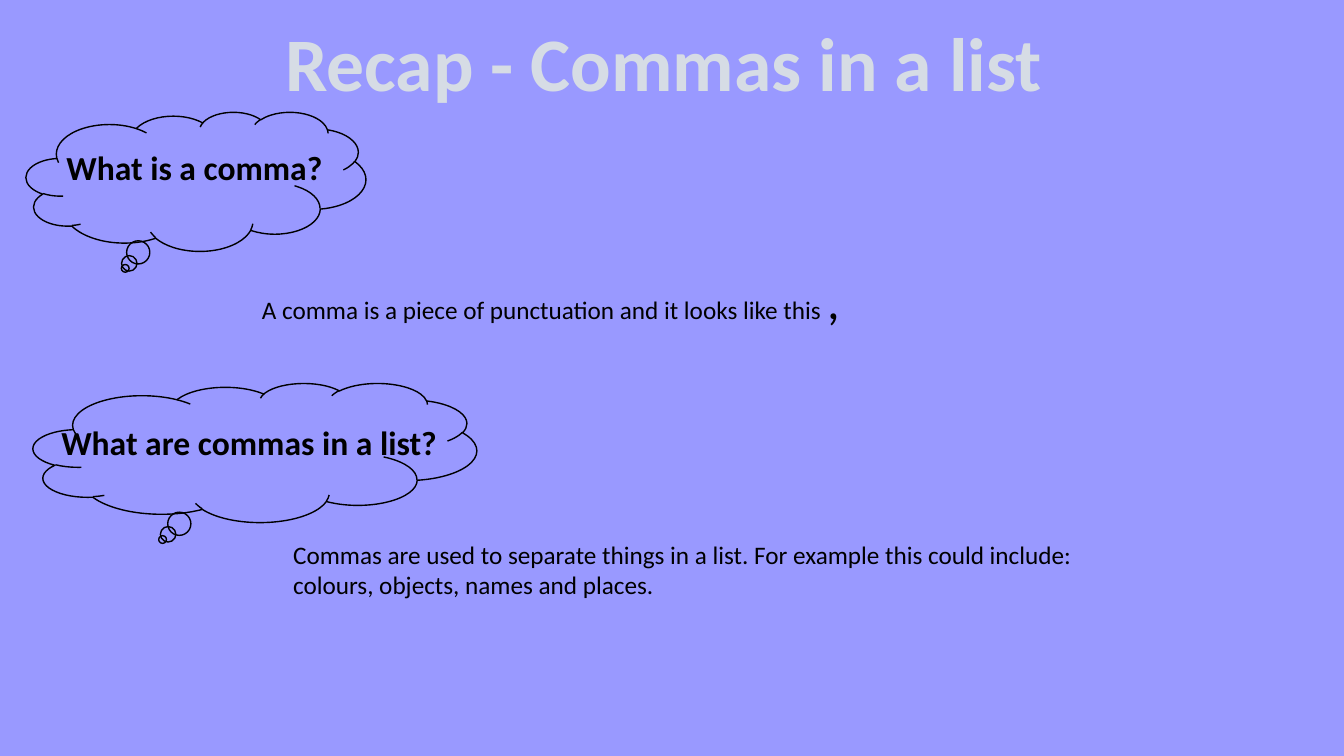
from dataclasses import dataclass

from lxml.etree import SubElement
from pptx import Presentation
from pptx.dml.color import RGBColor
from pptx.enum.dml import MSO_PATTERN as Pattern
from pptx.enum.shapes import MSO_SHAPE as Shape
from pptx.enum.text import MSO_AUTO_SIZE as AutoSize, PP_ALIGN as Align
from pptx.oxml.ns import qn
from pptx.slide import Slide
from pptx.text.text import Font
from pptx.util import Pt


@dataclass(frozen=True)
class Theme:
    font: str = "Calibri"
    background: RGBColor = RGBColor(0x99, 0x99, 0xFF)
    ink: RGBColor = RGBColor(0, 0, 0)
    title_stripe: RGBColor = RGBColor(0x44, 0x54, 0x6A)
    title_ground: RGBColor = RGBColor(0xD6, 0xDC, 0xE5)
    title_outline: str = "333F50"
    title_size: int = 54
    question_size: int = 24
    answer_size: int = 18
    comma_size: int = 36
    line_width: int = 1


THEME = Theme()


@dataclass(frozen=True)
class Box:
    left: float
    top: float
    width: float
    height: float

    def lengths(self) -> tuple[Pt, Pt, Pt, Pt]:
        return Pt(self.left), Pt(self.top), Pt(self.width), Pt(self.height)


@dataclass(frozen=True)
class Piece:
    text: str
    size: int
    bold: bool = False
    striped: bool = False


@dataclass(frozen=True)
class Caption:
    box: Box
    pieces: tuple[Piece, ...]
    wrap: bool = False
    align: Align = Align.LEFT


TITLE = Caption(
    Box(193.68, 7.92, 573.12, 72.72),
    (Piece("Recap - Commas in a list ", THEME.title_size, bold=True, striped=True),),
    align=Align.CENTER,
)
QUESTIONS = (
    Caption(Box(40.32, 101.52, 199.44, 36),
            (Piece("What is a comma?", THEME.question_size, bold=True),)),
    Caption(Box(36.72, 298.08, 295.2, 36),
            (Piece("What are commas in a list?", THEME.question_size, bold=True),),
            wrap=True),
)
ANSWERS = (
    Caption(Box(180, 188.64, 432, 51.12),
            (Piece("A comma is a piece of punctuation and it looks like this ",
                   THEME.answer_size),
             Piece(",", THEME.comma_size))),
    Caption(Box(202.32, 381.6, 629.28, 51.12),
            (Piece("Commas are used to separate things in a list. For example this "
                   "could include: colours, objects, names and places.",
                   THEME.answer_size),),
            wrap=True),
)
CLOUDS = (Box(18.72, 79.92, 242.64, 99.36), Box(23.76, 273.6, 316.8, 99.36))


def stripe_letters(font: Font) -> None:
    """Fill the letters with diagonal stripes and give them an outline."""
    font.fill.patterned()
    font.fill.pattern = Pattern.DARK_UPWARD_DIAGONAL
    font.fill.fore_color.rgb = THEME.title_stripe
    font.fill.back_color.rgb = THEME.title_ground
    properties = font._element
    outline = SubElement(properties, qn("a:ln"), w=str(Pt(THEME.line_width)))
    outline_fill = SubElement(outline, qn("a:solidFill"))
    SubElement(outline_fill, qn("a:srgbClr"), val=THEME.title_outline)
    properties.insert(0, outline)


def draw_caption(slide: Slide, caption: Caption) -> None:
    frame = slide.shapes.add_textbox(*caption.box.lengths()).text_frame
    frame.word_wrap = caption.wrap
    frame.auto_size = AutoSize.SHAPE_TO_FIT_TEXT
    paragraph = frame.paragraphs[0]
    paragraph.alignment = caption.align
    for piece in caption.pieces:
        run = paragraph.add_run()
        run.text = piece.text
        run.font.name = THEME.font
        run.font.size = Pt(piece.size)
        run.font.bold = piece.bold
        if piece.striped:
            stripe_letters(run.font)
        else:
            run.font.color.rgb = THEME.ink


def draw_cloud(slide: Slide, box: Box) -> None:
    cloud = slide.shapes.add_shape(Shape.CLOUD_CALLOUT, *box.lengths())
    cloud.shadow.inherit = False
    cloud.fill.background()
    cloud.line.color.rgb = THEME.ink
    cloud.line.width = Pt(THEME.line_width)


def main() -> None:
    deck = Presentation()
    deck.slide_width, deck.slide_height = Pt(960), Pt(540)
    slide = deck.slides.add_slide(deck.slide_layouts[6])

    # Background
    slide.background.fill.solid()
    slide.background.fill.fore_color.rgb = THEME.background

    # Title
    draw_caption(slide, TITLE)

    # Each question in its thought cloud, then its answer
    for cloud, question, answer in zip(CLOUDS, QUESTIONS, ANSWERS):
        draw_cloud(slide, cloud)
        draw_caption(slide, question)
        draw_caption(slide, answer)

    deck.save("out.pptx")


if __name__ == "__main__":
    main()
